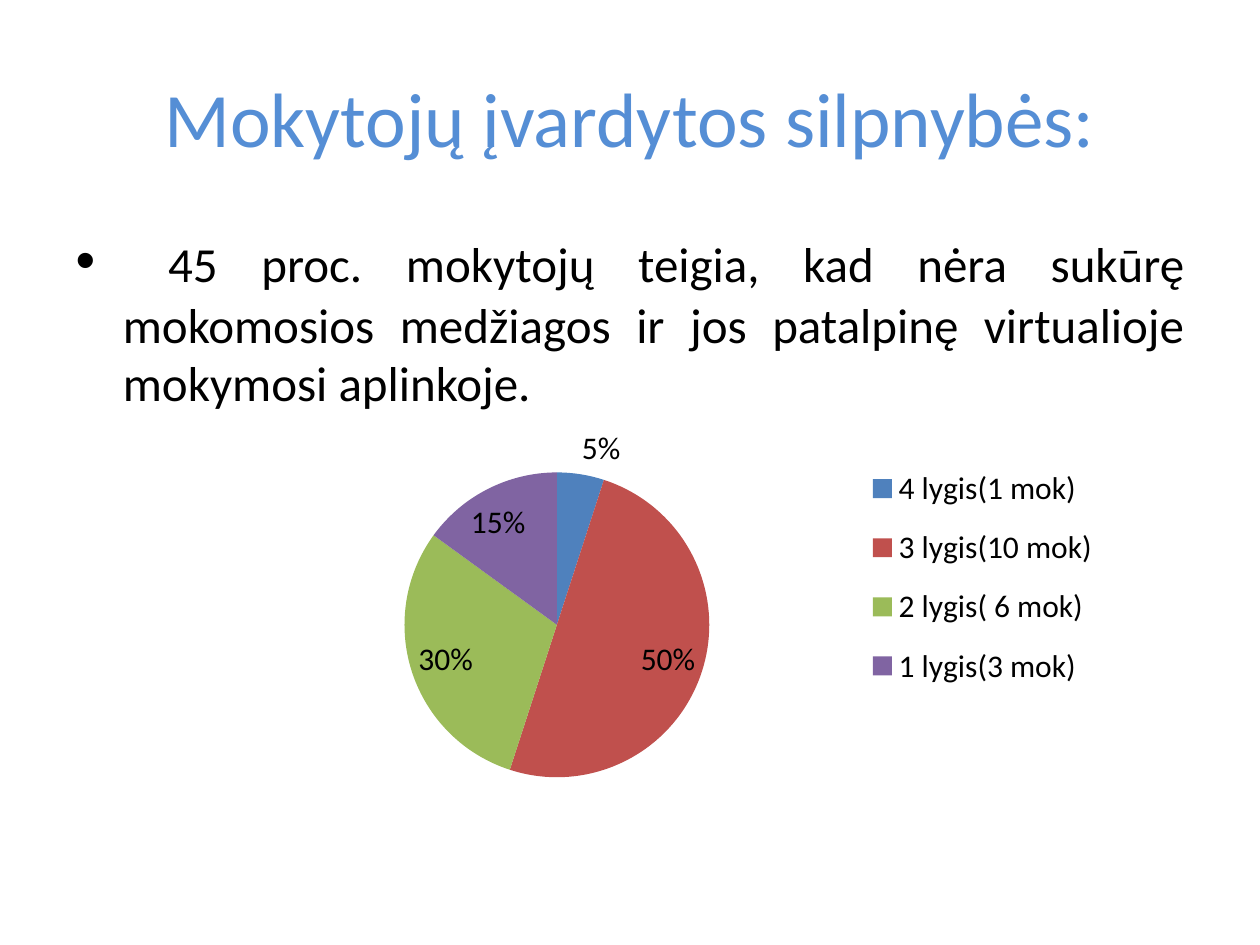
from lxml import etree
from pptx import Presentation
from pptx.chart.data import CategoryChartData
from pptx.dml.color import RGBColor
from pptx.enum.chart import XL_CHART_TYPE, XL_LABEL_POSITION, XL_LEGEND_POSITION
from pptx.enum.text import MSO_ANCHOR, PP_ALIGN
from pptx.oxml.ns import qn
from pptx.util import Pt

FONT = "Calibri"
TITLE_BLUE = RGBColor(0x55, 0x8E, 0xD5)
BLACK = RGBColor(0x00, 0x00, 0x00)
BLUE = RGBColor(0x4F, 0x81, 0xBD)
RED = RGBColor(0xC0, 0x50, 0x4D)
GREEN = RGBColor(0x9B, 0xBB, 0x59)
PURPLE = RGBColor(0x80, 0x64, 0xA2)

LEVELS = [
    ("4 lygis(1 mok)", 5, BLUE),
    ("3 lygis(10 mok)", 50, RED),
    ("2 lygis( 6 mok)", 30, GREEN),
    ("1 lygis(3 mok)", 15, PURPLE),
]


def style_font(font, size, color):
    font.name = FONT
    font.size = Pt(size)
    font.color.rgb = color


def set_layout(element, x, y, width, height, inner=False):
    """Place a chart part by fractions of the chart area."""
    for old_layout in element.findall(qn("c:layout")):
        element.remove(old_layout)
    layout = etree.Element(qn("c:layout"))
    manual = etree.SubElement(layout, qn("c:manualLayout"))
    settings = [("xMode", "edge"), ("yMode", "edge"),
                ("x", x), ("y", y), ("w", width), ("h", height)]
    if inner:
        settings.insert(0, ("layoutTarget", "inner"))
    for tag, value in settings:
        etree.SubElement(manual, qn(f"c:{tag}")).set("val", str(value))
    # In a legend the layout follows its position
    position = element.find(qn("c:legendPos"))
    if position is None:
        element.insert(0, layout)
    else:
        position.addnext(layout)


presentation = Presentation()
presentation.slide_width = Pt(720)
presentation.slide_height = Pt(540)
slide = presentation.slides.add_slide(presentation.slide_layouts[1])

# Title
title = slide.shapes.title
title.left, title.top, title.width, title.height = Pt(36), Pt(21.6), Pt(648), Pt(90)
title.text_frame.vertical_anchor = MSO_ANCHOR.MIDDLE
paragraph = title.text_frame.paragraphs[0]
paragraph.text = "Mokytojų įvardytos silpnybės:"
paragraph.alignment = PP_ALIGN.CENTER
style_font(paragraph.font, 44, TITLE_BLUE)

# Bulleted statement
body = slide.placeholders[1]
body.left, body.top, body.width, body.height = Pt(36), Pt(126), Pt(648), Pt(356.4)
paragraph = body.text_frame.paragraphs[0]
paragraph.alignment = PP_ALIGN.JUSTIFY
statement = ("45 proc. mokytojų teigia, kad nėra sukūrę mokomosios medžiagos "
             "ir jos patalpinę virtualioje mokymosi aplinkoje.")
for text, size in [(" ", 32), (statement, 28)]:
    run = paragraph.add_run()
    run.text = text
    style_font(run.font, size, BLACK)

# Pie chart
chart_data = CategoryChartData()
chart_data.categories = [name for name, _, _ in LEVELS]
chart_data.add_series("Series 1", [value for _, value, _ in LEVELS])
chart = slide.shapes.add_chart(
    XL_CHART_TYPE.PIE, Pt(25.2), Pt(207.4), Pt(623.5), Pt(272.2), chart_data).chart
chart.has_title = False
style_font(chart.font, 18, BLACK)
plot = chart.plots[0]
plot.vary_by_categories = True
for index, (_, _, color) in enumerate(LEVELS):
    fill = plot.series[0].points[index].format.fill
    fill.solid()
    fill.fore_color.rgb = color
plot_area = chart.element.find(qn("c:chart")).find(qn("c:plotArea"))
set_layout(plot_area, 0, 0.23, 0.94, 0.64, inner=True)

# Percentage labels
plot.has_data_labels = True
labels = plot.data_labels
labels.show_percentage = True
labels.show_value = False
labels.number_format = "0%"
labels.number_format_is_linked = False
labels.position = XL_LABEL_POSITION.BEST_FIT
style_font(labels.font, 18, BLACK)

# Legend
chart.has_legend = True
legend = chart.legend
legend.position = XL_LEGEND_POSITION.TOP
legend.include_in_layout = False
style_font(legend.font, 18, BLACK)
set_layout(chart.element.find(qn("c:chart")).find(qn("c:legend")), 0.74, 0.18, 0.24, 0.54)

presentation.save("out.pptx")
